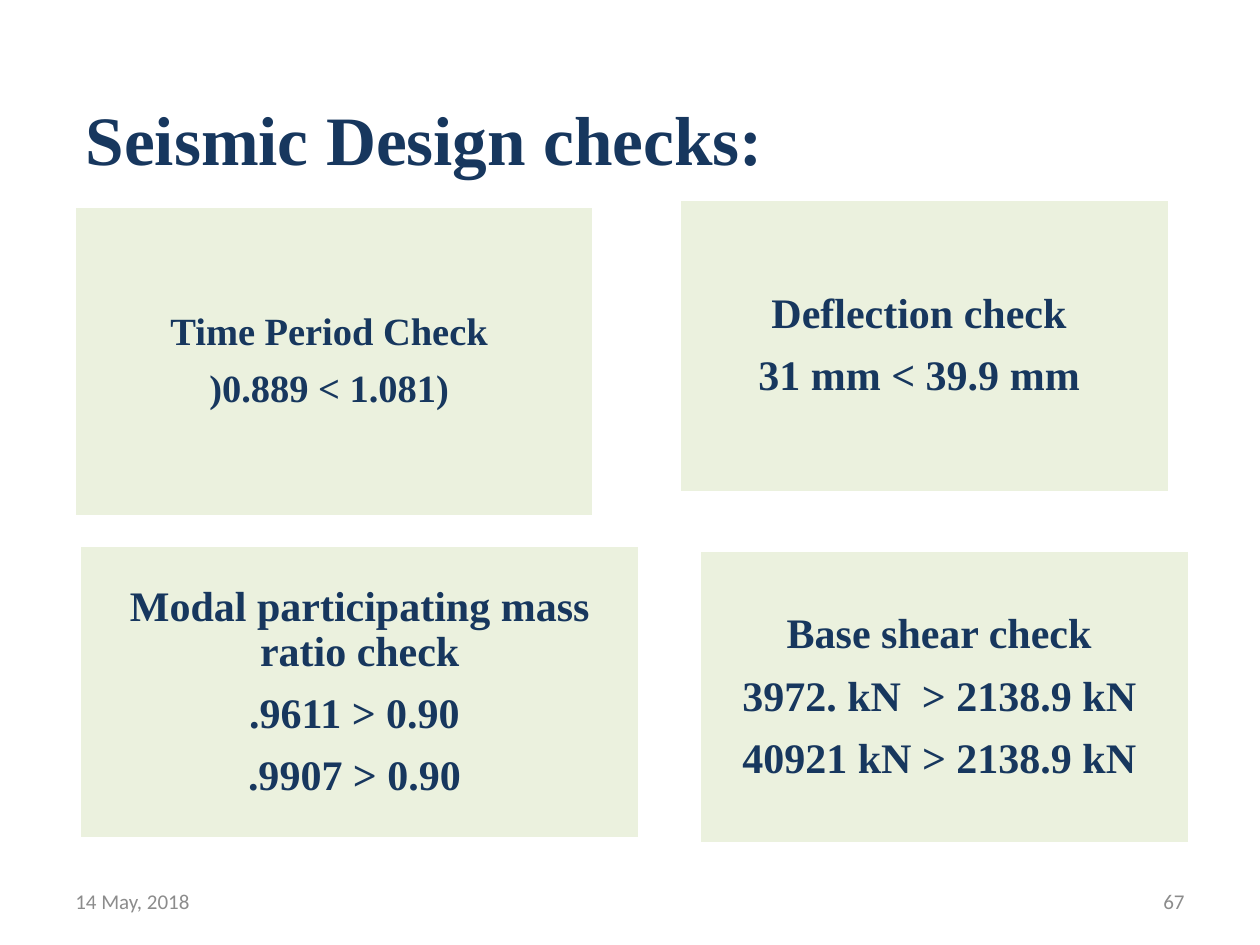
from pptx import Presentation
from pptx.dml.color import RGBColor
from pptx.enum.shapes import MSO_SHAPE
from pptx.enum.text import MSO_ANCHOR, PP_ALIGN
from pptx.util import Inches, Pt

RECTANGLE = MSO_SHAPE.RECTANGLE
MIDDLE = MSO_ANCHOR.MIDDLE
LEFT, CENTER, RIGHT = PP_ALIGN.LEFT, PP_ALIGN.CENTER, PP_ALIGN.RIGHT

# Content
TITLE = "Seismic Design checks:"
# left, top, width, height (inches), text size (points), lines
CHECKS = [
    ((0.59, 1.64, 4.12, 2.46), 22,
     ["Time Period Check ", ")0.889 < 1.081) "]),
    ((5.39, 1.58, 3.89, 2.33), 24,
     ["Deflection check ", "31 mm < 39.9 mm "]),
    ((0.63, 4.33, 4.45, 2.33), 24,
     ["Modal participating mass ratio check", ".9611 > 0.90 ", ".9907 > 0.90 "]),
    ((5.55, 4.37, 3.89, 2.33), 24,
     ["Base shear check ", "3972. kN  > 2138.9 kN ", "40921 kN > 2138.9 kN "]),
]
SLIDE_WIDTH, SLIDE_HEIGHT = 10, 7.5
MARGIN, FOOTER_TOP, FOOTER_WIDTH, FOOTER_HEIGHT = 0.5, 6.95, 2.33, 0.4
FOOTERS = [
    ("14 May, 2018", MARGIN, LEFT),
    ("67", SLIDE_WIDTH - MARGIN - FOOTER_WIDTH, RIGHT),
]

NAVY, PALE_GREEN, WHITE, GREY = "17375E", "EBF1DE", "FFFFFF", "8C8C8C"
SERIF, SANS = "Times New Roman", "Calibri"


def color(value):
    return RGBColor.from_string(value)


def write(frame, lines, font, size, hue, bold, align):
    frame.word_wrap = True
    frame.vertical_anchor = MIDDLE
    frame.text = "\n".join(lines)
    for paragraph in frame.paragraphs:
        paragraph.alignment = align
        for run in paragraph.runs:
            run.font.name = font
            run.font.size = Pt(size)
            run.font.bold = bold
            run.font.color.rgb = color(hue)


prs = Presentation()
prs.slide_width, prs.slide_height = Inches(SLIDE_WIDTH), Inches(SLIDE_HEIGHT)
slide = prs.slides.add_slide(prs.slide_layouts[5])

# Title
title = slide.shapes.title
title.left, title.top = Inches(0.58), Inches(0.69)
title.width, title.height = Inches(8.24), Inches(0.8)
write(title.text_frame, [TITLE], SERIF, 39.6, NAVY, True, LEFT)

# Date and page number
for text, left, align in FOOTERS:
    footer = slide.shapes.add_textbox(
        Inches(left), Inches(FOOTER_TOP), Inches(FOOTER_WIDTH), Inches(FOOTER_HEIGHT))
    write(footer.text_frame, [text], SANS, 12, GREY, False, align)

# Check panels
for box, size, lines in CHECKS:
    panel = slide.shapes.add_shape(RECTANGLE, *(Inches(v) for v in box))
    panel.shadow.inherit = False
    panel.fill.solid()
    panel.fill.fore_color.rgb = color(PALE_GREEN)
    panel.line.color.rgb = color(WHITE)
    panel.line.width = Pt(2)
    frame = panel.text_frame
    frame.margin_left = frame.margin_right = Inches(0.1)
    frame.margin_top = frame.margin_bottom = Inches(0.1)
    write(frame, lines, SERIF, size, NAVY, True, CENTER)
    for paragraph in frame.paragraphs:
        paragraph.line_spacing = 0.9
        paragraph.space_after = Pt(0.4 * size)

prs.save("out.pptx")
